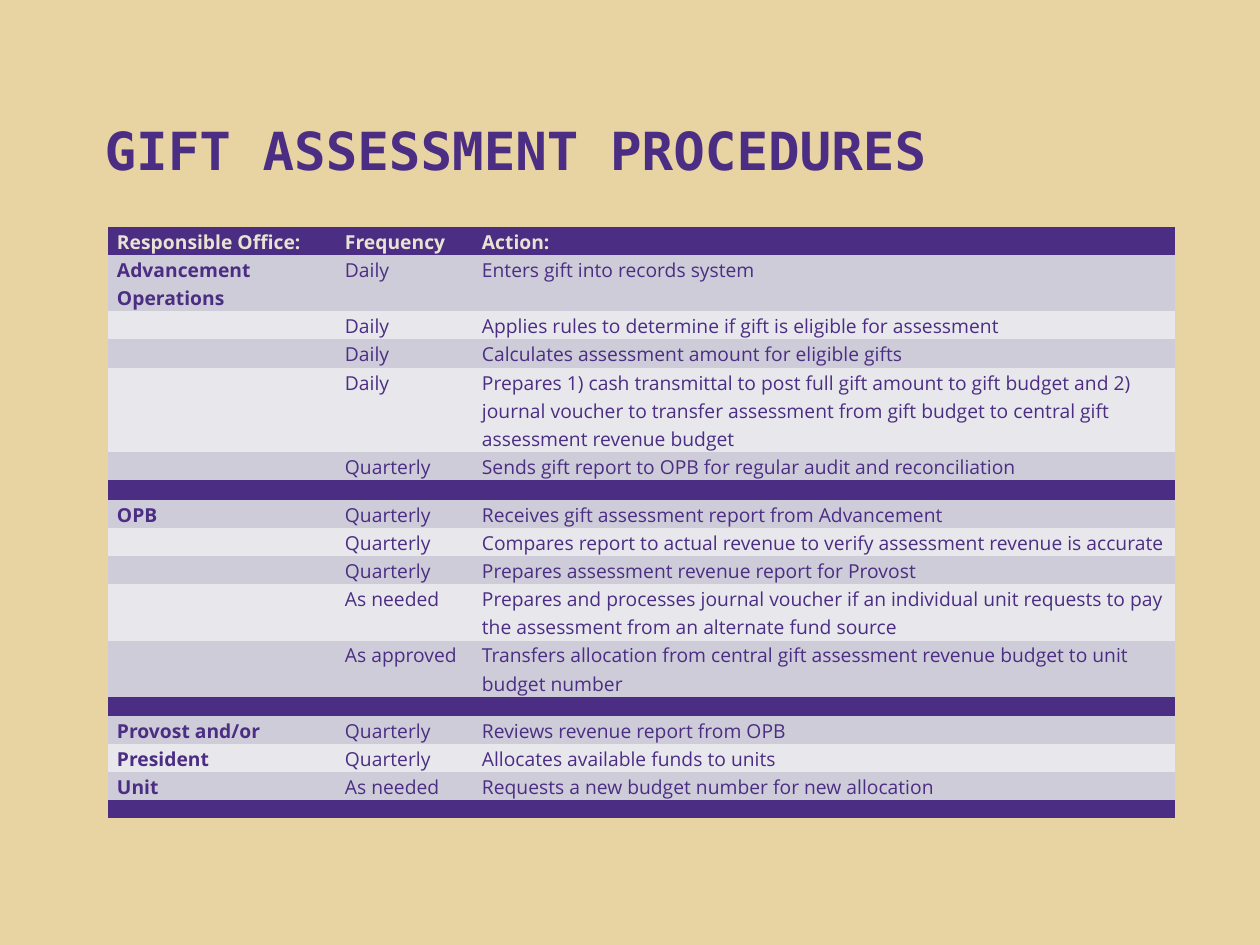
"""Build the gift assessment procedures slide."""
import pptx
import pptx.dml.color
import pptx.enum.text
import pptx.oxml.ns
import pptx.util
from lxml import etree

THEME = {
    "background": "E8D3A2", "purple": "4B2E83", "header_text": "E8E3D3",
    "bands": ("CECCD8", "E8E7EC"),
    "title_font": "DejaVu Sans Mono", "body_font": "Open Sans",
    "title_size": 30, "body_size": 11, "divider_size": 6,
}
NO_STYLE = "{2D5ABB26-0587-4C30-8999-92F81FD0307C}"
LINE_HEIGHT = 28
HEADINGS = ("Responsible Office:", "Frequency", "Action:")
SECTIONS = [
    ([
        ("Advancement Operations", "Daily", "Enters gift into records system", 2),
        ("", "Daily", "Applies rules to determine if gift is eligible for assessment", 1),
        ("", "Daily", "Calculates assessment amount for eligible gifts", 1),
        ("", "Daily", "Prepares 1) cash transmittal to post full gift amount to gift budget "
         "and 2) journal voucher to transfer assessment from gift budget to central gift "
         "assessment revenue budget", 3),
        ("", "Quarterly", "Sends gift report to OPB for regular audit and reconciliation", 1),
    ], 20),
    ([
        ("OPB", "Quarterly", "Receives gift assessment report from Advancement", 1),
        ("", "Quarterly", "Compares report to actual revenue to verify assessment revenue "
         "is accurate", 1),
        ("", "Quarterly", "Prepares assessment revenue report for Provost", 1),
        ("", "As needed", "Prepares and processes journal voucher if an individual unit "
         "requests to pay the assessment from an alternate fund source", 2),
        ("", "As approved", "Transfers allocation from central gift assessment revenue "
         "budget to unit budget number", 2),
    ], 19),
    ([
        ("Provost and/or", "Quarterly", "Reviews revenue report from OPB", 1),
        ("President", "Quarterly", "Allocates available funds to units", 1),
        ("Unit", "As needed", "Requests a new budget number for new allocation", 1),
    ], 18),
]


def px(length):
    return pptx.util.Emu(round(length * 914400 / 126))


def color(name):
    return pptx.dml.color.RGBColor.from_string(THEME.get(name, name))


deck = pptx.Presentation()
deck.slide_width, deck.slide_height = px(1260), px(945)
page = deck.slides.add_slide(deck.slide_layouts[5])
page.background.fill.solid()
page.background.fill.fore_color.rgb = color("background")

title = page.shapes.title
title.left, title.top, title.width, title.height = px(92), px(50), px(1128), px(137)
title.text_frame.text = "GIFT ASSESSMENT PROCEDURES"
title.text_frame.auto_size = pptx.enum.text.MSO_AUTO_SIZE.NONE
title.text_frame.vertical_anchor = pptx.enum.text.MSO_ANCHOR.BOTTOM
para = title.text_frame.paragraphs[0]
para.alignment = pptx.enum.text.PP_ALIGN.LEFT
span = para.runs[0]
span.font.name = THEME["title_font"]
span.font.size = pptx.util.Pt(THEME["title_size"])
span.font.bold = True
span.font.color.rgb = color("purple")

rows = [(HEADINGS, LINE_HEIGHT, "purple", "header_text", "body_size")]
for entries, divider_height in SECTIONS:
    for index, (*texts, lines) in enumerate(entries):
        rows.append((texts, lines * LINE_HEIGHT, THEME["bands"][index % 2], "purple", "body_size"))
    rows.append((("", "", ""), divider_height, "purple", "purple", "divider_size"))

column_widths = (228, 137, 702)
table = page.shapes.add_table(
    len(rows), len(column_widths), px(108), px(227),
    px(sum(column_widths)), px(sum(row[1] for row in rows))).table
table.first_row = table.horz_banding = False
table._tbl.tblPr.find(pptx.oxml.ns.qn("a:tableStyleId")).text = NO_STYLE
for column, width in zip(table.columns, column_widths):
    column.width = px(width)

for row_index, (texts, height, fill, text_color, size) in enumerate(rows):
    table.rows[row_index].height = px(height)
    for column_index, text in enumerate(texts):
        cell = table.cell(row_index, column_index)
        cell.margin_left = cell.margin_right = px(9)
        cell.margin_top = cell.margin_bottom = 0
        cell.fill.solid()
        cell.fill.fore_color.rgb = color(fill)
        cell.text_frame.text = text
        para = cell.text_frame.paragraphs[0]
        para.line_spacing = 1.07
        for span in para.runs:
            span.font.name = THEME["body_font"]
            span.font.size = pptx.util.Pt(THEME[size])
            span.font.bold = row_index == 0 or column_index == 0
            span.font.color.rgb = color(text_color)
        if not text:
            ending = etree.SubElement(para._p, pptx.oxml.ns.qn("a:endParaRPr"))
            ending.set("sz", str(THEME[size] * 100))
            etree.SubElement(ending, pptx.oxml.ns.qn("a:latin")).set("typeface", THEME["body_font"])

deck.save("out.pptx")
